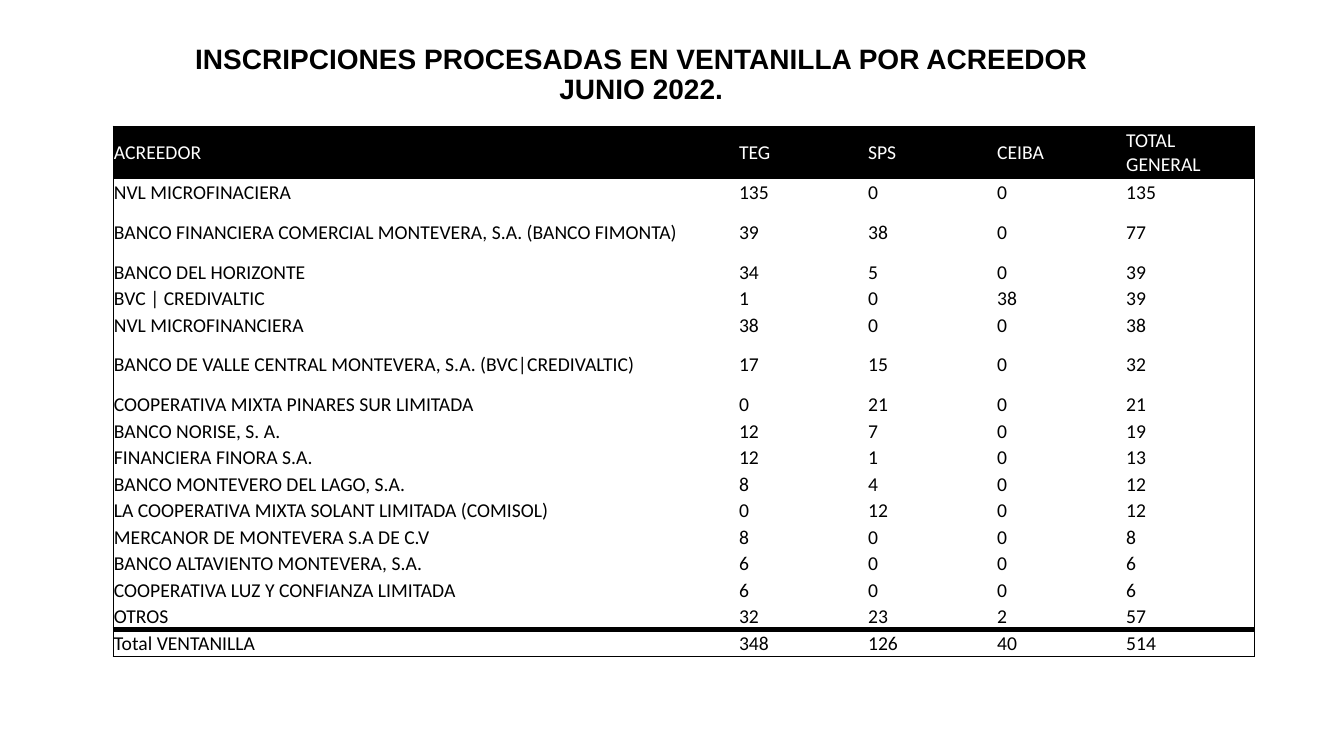
from pptx import Presentation
from pptx.dml.color import RGBColor
from pptx.enum import text as tx
from pptx.oxml import parse_xml
from pptx.oxml.ns import nsdecls
from pptx.util import Inches, Pt

BLACK = RGBColor(0, 0, 0)
WHITE = RGBColor(255, 255, 255)
TITLE = "INSCRIPCIONES PROCESADAS EN VENTANILLA POR ACREEDOR\vJUNIO 2022."
ROWS = [
    ("ACREEDOR", "TEG", "SPS", "CEIBA", "TOTAL GENERAL"),
    ("NVL MICROFINACIERA", 135, 0, 0, 135),
    ("BANCO FINANCIERA COMERCIAL MONTEVERA, S.A. (BANCO FIMONTA)", 39, 38, 0, 77),
    ("BANCO DEL HORIZONTE", 34, 5, 0, 39),
    ("BVC | CREDIVALTIC", 1, 0, 38, 39),
    ("NVL MICROFINANCIERA", 38, 0, 0, 38),
    ("BANCO DE VALLE CENTRAL MONTEVERA, S.A. (BVC|CREDIVALTIC)", 17, 15, 0, 32),
    ("COOPERATIVA MIXTA PINARES SUR LIMITADA", 0, 21, 0, 21),
    ("BANCO NORISE, S. A.", 12, 7, 0, 19),
    ("FINANCIERA FINORA S.A.", 12, 1, 0, 13),
    ("BANCO MONTEVERO DEL LAGO, S.A.", 8, 4, 0, 12),
    ("LA COOPERATIVA MIXTA SOLANT LIMITADA (COMISOL)", 0, 12, 0, 12),
    ("MERCANOR DE MONTEVERA S.A DE C.V", 8, 0, 0, 8),
    ("BANCO ALTAVIENTO MONTEVERA, S.A.", 6, 0, 0, 6),
    ("COOPERATIVA LUZ Y CONFIANZA LIMITADA", 6, 0, 0, 6),
    ("OTROS", 32, 23, 2, 57),
    ("Total VENTANILLA", 348, 126, 40, 514),
]
TALL = {0, 2, 6}
WIDE, NARROW, HIGH = 6.2, 1.28, 5.26
THIN, THICK = 0.5, 4
PAD = dict(margin_left=Inches(0.01), margin_right=Inches(0.01),
           margin_top=Inches(0.01), margin_bottom=0,
           vertical_anchor=tx.MSO_ANCHOR.MIDDLE)


def apply(item, **form):
    """Set each format value on the item."""
    for key, val in form.items():
        setattr(item, key, val)


def edge(cell, side, width):
    """Draw one border of a cell, or clear it when the width is zero."""
    paint = f'<a:solidFill><a:srgbClr val="{BLACK}"/></a:solidFill>' if width else "<a:noFill/>"
    return parse_xml(f'<a:ln{side} {nsdecls("a")} w="{Pt(width)}">{paint}</a:ln{side}>')


def add_title(slide):
    """Place the two-line heading."""
    box = slide.shapes.title
    apply(box, left=Inches(1.42), top=Inches(0.36), width=Inches(9.88), height=Inches(0.77))
    frame = box.text_frame
    frame.text = TITLE
    apply(frame, vertical_anchor=tx.MSO_ANCHOR.MIDDLE, auto_size=tx.MSO_AUTO_SIZE.NONE)
    para = frame.paragraphs[0]
    apply(para, alignment=tx.PP_ALIGN.CENTER, line_spacing=0.9)
    for run in para.runs:
        apply(run.font, name="Arial", size=Pt(20), bold=True)
        run.font.color.rgb = BLACK


def add_grid(slide):
    """Build the table of creditors."""
    last, end = len(ROWS) - 1, len(ROWS[0]) - 1
    grid = slide.shapes.add_table(
        last + 1, end + 1, Inches(1.12), Inches(1.25),
        Inches(WIDE + end * NARROW), Inches(HIGH)).table
    apply(grid, first_row=False, horz_banding=False)
    for c, col in enumerate(grid.columns):
        col.width = Inches(NARROW if c else WIDE)
    unit = HIGH / (len(ROWS) + len(TALL))
    for r, vals in enumerate(ROWS):
        grid.rows[r].height = Inches(unit * (2 if r in TALL else 1))
        for c, val in enumerate(vals):
            cell = grid.cell(r, c)
            cell.text = str(val)
            apply(cell, **PAD)
            font = cell.text_frame.paragraphs[0].runs[0].font
            apply(font, name="Calibri", size=Pt(14), bold=False)
            font.color.rgb = BLACK if r else WHITE
            cell.fill.solid()
            cell.fill.fore_color.rgb = WHITE if r else BLACK
            sides = {
                "L": THIN if c == 0 else 0,
                "R": THIN if c == end else 0,
                "T": {0: THIN, last: THICK}.get(r, 0),
                "B": {last - 1: THICK, last: THIN}.get(r, 0),
            }
            props = cell._tc.get_or_add_tcPr()
            for n, (side, width) in enumerate(sides.items()):
                props.insert(n, edge(cell, side, width))


def main():
    """Build the slide and save it."""
    deck = Presentation()
    apply(deck, slide_width=Inches(13.33), slide_height=Inches(7.5))
    slide = deck.slides.add_slide(deck.slide_layouts[5])
    add_title(slide)
    add_grid(slide)
    deck.save("out.pptx")


if __name__ == "__main__":
    main()
